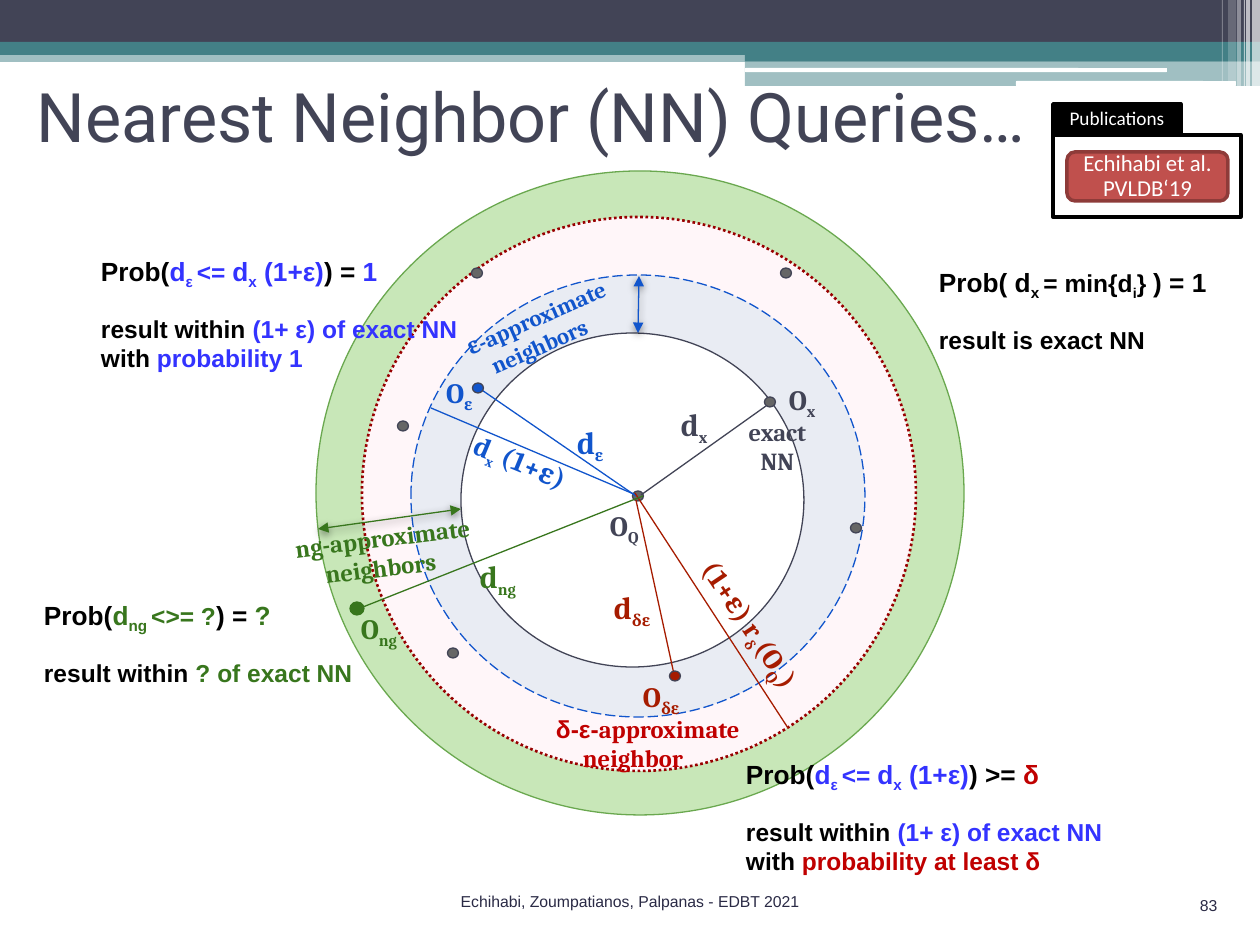
from typing import NamedTuple
from pptx import Presentation
from pptx.dml.color import RGBColor
from pptx.enum.dml import MSO_LINE
from pptx.enum.shapes import MSO_CONNECTOR, MSO_SHAPE
from pptx.enum.text import MSO_ANCHOR, PP_ALIGN
from pptx.oxml.ns import qn
from pptx.util import Emu, Pt
from lxml import etree

RECT, ROUND, OVAL = MSO_SHAPE.RECTANGLE, MSO_SHAPE.ROUNDED_RECTANGLE, MSO_SHAPE.OVAL
STRAIGHT = MSO_CONNECTOR.STRAIGHT
DOT, LONG_DASH = MSO_LINE.ROUND_DOT, MSO_LINE.LONG_DASH
LEFT, CENTER = PP_ALIGN.LEFT, PP_ALIGN.CENTER
TOP, MIDDLE, BOTTOM = MSO_ANCHOR.TOP, MSO_ANCHOR.MIDDLE, MSO_ANCHOR.BOTTOM

WHITE = RGBColor(0xFF, 0xFF, 0xFF)
BLACK = RGBColor(0, 0, 0)
SLATE = RGBColor(0x42, 0x44, 0x56)
TEAL = RGBColor(0x43, 0x80, 0x86)
INK = RGBColor(0x2A, 0x2A, 0x45)
GRAY = RGBColor(0x66, 0x66, 0x66)
BLUE = RGBColor(0x11, 0x55, 0xCC)
VIOLET = RGBColor(0x33, 0x33, 0xFF)
GREEN = RGBColor(0x38, 0x76, 0x1D)
RUST = RGBColor(0xA6, 0x1C, 0x00)
RED = RGBColor(0xC0, 0x00, 0x00)
MAROON = RGBColor(0x98, 0x00, 0x00)
LEAF = RGBColor(0x6A, 0xA8, 0x4F)
PALE_GREEN = RGBColor(0xC8, 0xE7, 0xB8)
PALE_PINK = RGBColor(0xFF, 0xF6, 0xF9)
PALE_BLUE = RGBColor(0xE9, 0xEC, 0xF3)
BRICK = RGBColor(0xC0, 0x50, 0x4D)
DARK_BRICK = RGBColor(0x8E, 0x3B, 0x39)


class Run(NamedTuple):
    text: str
    size: float
    color: RGBColor
    sub: bool = False
    font: str = ""


def px(n):
    return Emu(round(n * 914400 / 126))


def add_shape(s, kind, box, fill, line=None, width=0.75, dash=None, alpha=None):
    sp = s.shapes.add_shape(kind, *map(px, box))
    sp.shadow.inherit = False
    sp.fill.solid()
    sp.fill.fore_color.rgb = fill
    if alpha:
        clr = sp._element.spPr.find(qn("a:solidFill"))[0]
        etree.SubElement(clr, qn("a:alpha"), val=str(alpha * 1000))
    if line is None:
        sp.line.fill.background()
    else:
        sp.line.color.rgb = line
        sp.line.width = Pt(width)
    if dash:
        sp.line.dash_style = dash
    return sp


def add_dot(s, x, y, fill=GRAY):
    add_shape(s, OVAL, (x - 5.5, y - 5, 11, 10), fill, SLATE)


def add_line(s, x1, y1, x2, y2, color, arrows=False):
    c = s.shapes.add_connector(STRAIGHT, *map(px, (x1, y1, x2, y2)))
    c.line.color.rgb = color
    c.line.width = Pt(0.75)
    spPr = c._element.spPr
    effects = etree.SubElement(spPr, qn("a:effectLst"))
    if arrows:
        ln = spPr.find(qn("a:ln"))
        for end in ("a:headEnd", "a:tailEnd"):
            etree.SubElement(ln, qn(end), type="triangle")
        shadow = etree.SubElement(effects, qn("a:outerShdw"), blurRad=str(Pt(4.5)),
                                  dist=str(Pt(1.5)), dir="5400000")
        clr = etree.SubElement(shadow, qn("a:srgbClr"), val="000000")
        etree.SubElement(clr, qn("a:alpha"), val="50000")


def fill_text(sp, paras, font, bold=False, align=LEFT, anchor=TOP, inset=6,
              indents=(), gap=0, spacing=None):
    tf = sp.text_frame
    tf.word_wrap = True
    tf.vertical_anchor = anchor
    tf.margin_left = tf.margin_right = px(13)
    tf.margin_top = tf.margin_bottom = px(inset)
    for i, runs in enumerate(paras):
        p = tf.add_paragraph() if i else tf.paragraphs[0]
        p.alignment = align
        if i and gap:
            p.space_before = Pt(gap)
        if spacing:
            p.line_spacing = spacing
        if i < len(indents):
            p._p.get_or_add_pPr().set("marL", str(px(indents[i])))
        for run in runs:
            r = p.add_run()
            r.text = run.text
            r.font.name = run.font or font
            r.font.size = Pt(run.size)
            r.font.bold = bold
            r.font.color.rgb = run.color
            if run.sub:
                r._r.get_or_add_rPr().set("baseline", "-25000")


def add_text(s, box, paras, font, rot=0, **style):
    sp = s.shapes.add_textbox(*map(px, box))
    sp.rotation = rot
    fill_text(sp, paras, font, **style)


def add_label(s, box, paras, rot=0, **style):
    add_text(s, box, paras, "Cambria", rot, bold=True, inset=13, **style)


def add_symbol(s, box, base, sub, color, size=16):
    add_label(s, box, [[Run(base, size, color), Run(sub, 16, color, True)]])


def add_claim(s, box, formula, result):
    add_text(s, box, [formula, result], "Arial", bold=True, inset=13, gap=13)


def epsilon_formula(comparison, value, color):
    return [Run("Prob(", 15, BLACK), Run("d", 15, VIOLET), Run("ε ", 15, VIOLET, True),
            Run("<= ", 14, VIOLET), Run("d", 15, VIOLET), Run("x", 15, VIOLET, True),
            Run(" (1+ε)", 15, VIOLET), Run(f") {comparison} ", 15, BLACK), Run(value, 15, color)]


def epsilon_result(probability, color):
    return [Run("result within ", 14, BLACK), Run("(1+ ε) of exact NN ", 14, VIOLET),
            Run("with ", 14, BLACK), Run(probability, 14, color)]


def draw_banner(s):
    add_shape(s, RECT, (0, 50, 1260, 12), TEAL, alpha=50)
    add_shape(s, RECT, (0, 0, 1260, 43), SLATE)
    add_shape(s, RECT, (0, 42, 1260, 13), TEAL)
    add_shape(s, RECT, (745, 49, 515, 12), TEAL)
    add_shape(s, RECT, (745, 61, 515, 25), TEAL, alpha=50)
    for box in ((745, 68, 422, 4), (1016, 81, 220, 5)):
        add_shape(s, ROUND, box, WHITE)
    for x, w, h, alpha in ((1252, 8, 86, 65), (1246, 4, 86, 65), (1244, 1, 86, 60),
                           (1237, 4, 86, 40), (1228, 8, 81, 20), (1222, 1, 81, 30)):
        add_shape(s, RECT, (x, 0, w, h), WHITE, alpha=alpha)


def draw_rings(s):
    add_shape(s, OVAL, (316, 171, 648, 644), PALE_GREEN, LEAF)
    add_shape(s, OVAL, (362, 217, 554, 554), PALE_PINK, MAROON, 1.5, DOT)
    add_shape(s, OVAL, (411, 275, 454, 442), PALE_BLUE, BLUE, dash=LONG_DASH)
    add_shape(s, OVAL, (461, 333, 343, 334), WHITE, SLATE)
    add_dot(s, 638, 496)
    for line in ((431, 408, 636, 495, BLUE), (641, 495, 766, 406, SLATE),
                 (476, 386, 636, 496, BLUE), (635, 493, 788, 728, RUST),
                 (643, 496, 358, 609, GREEN), (636, 500, 674, 674, RUST)):
        add_line(s, *line)
    add_line(s, 639, 276, 638, 333, BLUE, arrows=True)
    add_line(s, 318, 529, 461, 509, GREEN, arrows=True)
    add_shape(s, OVAL, (350, 602, 14, 13), GREEN, GREEN)
    add_dot(s, 478, 388, BLUE)
    add_dot(s, 675, 676, RUST)
    for x, y in ((770, 402), (477, 273), (403, 426), (453, 653), (786, 273), (856, 528)):
        add_dot(s, x, y)


def draw_labels(s):
    add_symbol(s, (668, 392, 71, 50), "d", "x", SLATE, 18)
    add_symbol(s, (564, 410, 57, 60), "d", "ε", BLUE, 18)
    add_symbol(s, (601, 575, 69, 35), "d", "δε", RUST, 18)
    add_symbol(s, (467, 544, 81, 66), "d", "ng", GREEN, 18)
    add_symbol(s, (776, 370, 66, 67), "O", "x", SLATE)
    add_symbol(s, (630, 667, 81, 45), "O", "δε", RUST)
    add_symbol(s, (597, 496, 66, 67), "O", "Q", SLATE)
    add_symbol(s, (348, 599, 125, 67), "O", "ng", GREEN)
    add_symbol(s, (433, 363, 160, 96), "O", "ε", BLUE)
    add_label(s, (648, 602, 209, 72), [[
        Run("(1+ε) r", 16, RUST), Run("δ", 14, RUST, True), Run("(O", 16, RUST),
        Run("Q", 16, RUST, True), Run(")", 16, RUST)]], 56.1, indents=(6,))
    add_label(s, (452, 435, 152, 63), [[
        Run("d", 16, BLUE), Run("x", 14, BLUE, True), Run(" (1+ε)", 16, BLUE)]],
        22.6, indents=(6,))
    add_label(s, (543, 701, 237, 50), [
        [Run("δ-ε-", 14, RED, font="Arial"), Run("approximate", 14, RED)],
        [Run("neighbor", 14, RED)]], indents=(0, 27))
    add_label(s, (281, 508, 231, 50), [
        [Run("ng-approximate", 14, GREEN)], [Run("neighbors", 14, GREEN)]],
        352.9, indents=(0, 27))
    add_label(s, (447, 287, 195, 52), [
        [Run("ε-approximate", 13, BLUE)], [Run("neighbors", 13, BLUE)]],
        336.3, indents=(0, 15))
    add_label(s, (683, 404, 189, 59), [
        [Run("exact", 14, SLATE)], [Run("NN", 14, SLATE)]], align=CENTER)


def draw_claims(s):
    add_claim(s, (733, 745, 408, 139), epsilon_formula(">=", "δ", RED),
              epsilon_result("probability at least δ", RED))
    add_claim(s, (88, 242, 408, 139), epsilon_formula("=", "1", VIOLET),
              epsilon_result("probability 1", VIOLET))
    add_claim(s, (31, 586, 352, 112),
              [Run("Prob(", 15, BLACK), Run("d", 15, GREEN), Run("ng ", 15, GREEN, True),
               Run("<>= ?", 14, GREEN), Run(") = ", 15, BLACK), Run("?", 15, GREEN)],
              [Run("result within ", 14, BLACK), Run("? of exact NN", 14, GREEN)])
    add_claim(s, (926, 253, 302, 112),
              [Run("Prob( d", 15, BLACK), Run("x ", 15, BLACK, True), Run("= min{d", 14, BLACK),
               Run("i", 14, BLACK, True), Run("} ", 14, BLACK), Run(") = 1", 15, BLACK)],
              [Run("result is exact NN", 14, BLACK)])


def draw_publications(s):
    add_shape(s, RECT, (1053, 135, 188, 82), WHITE, BLACK, 2)
    tab = add_shape(s, RECT, (1053, 104, 128, 31), BLACK, BLACK, 2)
    fill_text(tab, [[Run("Publications", 11, WHITE)]], "Calibri", align=CENTER, anchor=BOTTOM)
    badge = add_shape(s, ROUND, (1067, 152, 161, 49), BRICK, DARK_BRICK, 2)
    fill_text(badge, [[Run("Echihabi et al.", 13, WHITE)], [Run("PVLDB‘19", 13, WHITE)]],
              "Calibri", align=CENTER, anchor=MIDDLE, spacing=0.9)


def main():
    prs = Presentation()
    prs.slide_width, prs.slide_height = px(1260), px(945)
    s = prs.slides.add_slide(prs.slide_layouts[6])
    draw_banner(s)
    draw_rings(s)
    draw_labels(s)
    draw_claims(s)
    add_text(s, (24, 68, 1134, 147), [[Run("Nearest Neighbor (NN) Queries…", 39, SLATE)]], "Roboto")
    add_text(s, (417, 876, 426, 50), [[Run("Echihabi, Zoumpatianos, Palpanas - EDBT 2021", 9, INK)]],
             "Arial", align=CENTER, anchor=MIDDLE)
    add_text(s, (1187, 890, 53, 31), [[Run("83", 9, INK)]], "Arial")
    draw_publications(s)
    prs.save("out.pptx")


if __name__ == "__main__":
    main()
